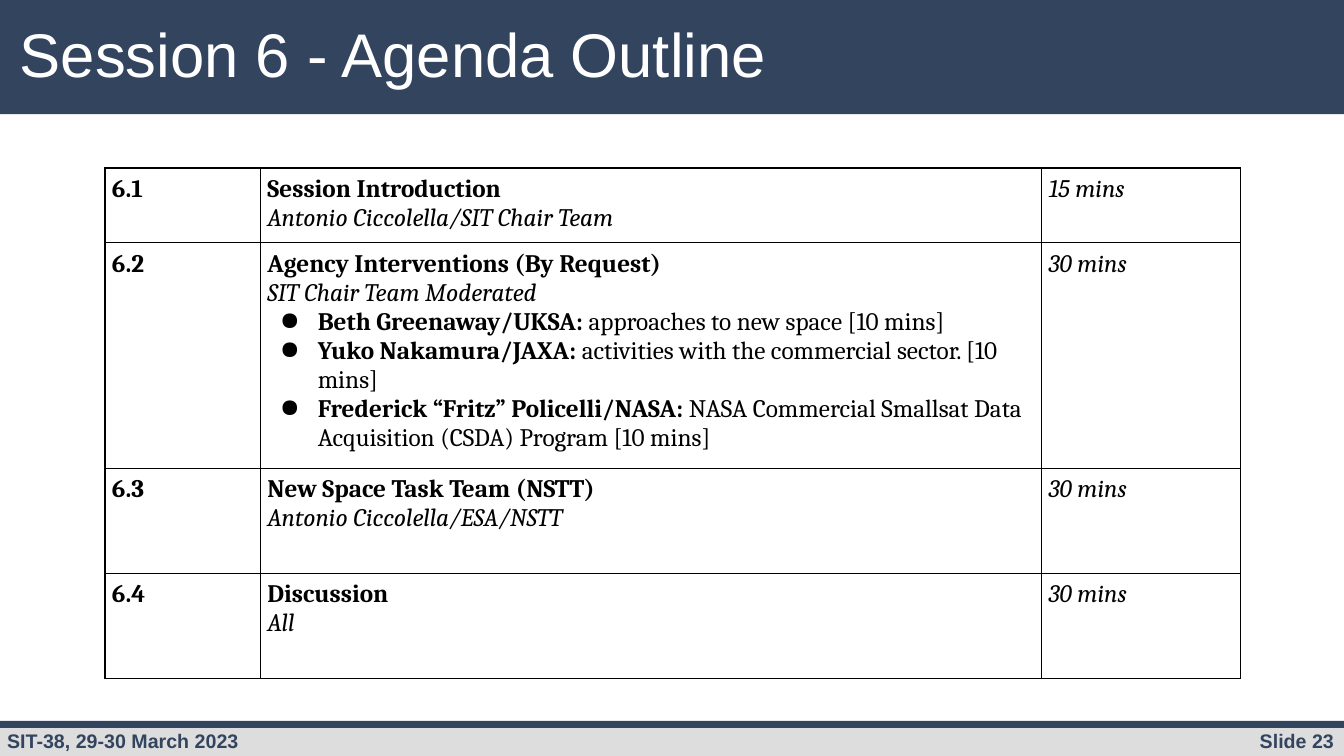
from lxml.etree import SubElement
from pptx import Presentation
from pptx.dml.color import RGBColor
from pptx.enum.shapes import MSO_SHAPE as Preset
from pptx.enum.text import MSO_ANCHOR as Anchor, PP_ALIGN as Align
from pptx.oxml.ns import qn
from pptx.util import Pt

COLORS = {"navy": "33445F", "gray": "DDDDDD", "white": "FFFFFF", "black": "000000"}
SLIDE_WIDTH, SLIDE_HEIGHT = 960, 540
COLUMN_WIDTHS = [111, 558, 142]
ROW_HEIGHTS = [53, 161, 75, 75]

# Number, topic, lead, speakers with their subjects, duration
AGENDA = [
    ("6.1", "Session Introduction", "Antonio Ciccolella/SIT Chair Team", [], "15 mins"),
    ("6.2", "Agency Interventions (By Request)", "SIT Chair Team Moderated", [
        ("Beth Greenaway/UKSA:", " approaches to new space [10 mins]"),
        ("Yuko Nakamura/JAXA:", " activities with the commercial sector. [10 mins]"),
        ("Frederick “Fritz” Policelli/NASA:",
         " NASA Commercial Smallsat Data Acquisition (CSDA) Program [10 mins]"),
    ], "30 mins"),
    ("6.3", "New Space Task Team (NSTT)", "Antonio Ciccolella/ESA/NSTT", [], "30 mins"),
    ("6.4", "Discussion", "All", [], "30 mins"),
]


def color(name):
    return RGBColor.from_string(COLORS[name])


def add_run(paragraph, text, size, ink, face="Arial", bold=False, italic=False):
    run = paragraph.add_run()
    run.text = text
    font = run.font
    font.name, font.size, font.bold, font.italic = face, Pt(size), bold, italic
    font.color.rgb = color(ink)


def add_band(slide, top, height, fill):
    band = slide.shapes.add_shape(Preset.RECTANGLE, 0, Pt(top), Pt(SLIDE_WIDTH), Pt(height))
    band.shadow.inherit = False
    band.fill.solid()
    band.fill.fore_color.rgb = color(fill)
    band.line.fill.background()


def add_footer_text(slide, left, width, text, align):
    box = slide.shapes.add_textbox(Pt(left), Pt(517), Pt(width), Pt(24))
    box.text_frame.word_wrap = True
    paragraph = box.text_frame.paragraphs[0]
    paragraph.alignment = align
    add_run(paragraph, text, 14, "navy", bold=True)


def add_title(slide, text):
    title = slide.shapes.title
    title.left, title.top, title.width, title.height = Pt(7), Pt(8), Pt(683), Pt(60)
    title.text_frame.vertical_anchor = Anchor.MIDDLE
    paragraph = title.text_frame.paragraphs[0]
    paragraph.alignment = Align.LEFT
    add_run(paragraph, text, 44, "white")


def add_bullet(paragraph):
    properties = paragraph._p.get_or_add_pPr()
    properties.set("marL", str(Pt(36)))
    properties.set("indent", str(Pt(-27)))
    bullet_color = SubElement(properties, qn("a:buClr"))
    SubElement(bullet_color, qn("a:srgbClr"), val=COLORS["black"])
    SubElement(properties, qn("a:buChar"), char="●")


def add_borders(cell):
    properties = cell._tc.get_or_add_tcPr()
    for position, side in enumerate(("lnL", "lnR", "lnT", "lnB")):
        border = properties.makeelement(qn(f"a:{side}"), {"w": str(Pt(1))})
        fill = SubElement(border, qn("a:solidFill"))
        SubElement(fill, qn("a:srgbClr"), val=COLORS["black"])
        properties.insert(position, border)


def fill_cell(cell, lines):
    """Each line is a list of (text, style) runs and a bullet flag."""
    cell.margin_left = cell.margin_right = cell.margin_top = cell.margin_bottom = Pt(5)
    cell.vertical_anchor = Anchor.TOP
    cell.fill.background()
    add_borders(cell)
    frame = cell.text_frame
    for index, (runs, bulleted) in enumerate(lines):
        paragraph = frame.add_paragraph() if index else frame.paragraphs[0]
        if bulleted:
            add_bullet(paragraph)
        for text, style in runs:
            add_run(paragraph, text, 18, "black", "Cambria",
                    bold=style == "bold", italic=style == "italic")


def add_agenda(slide):
    table = slide.shapes.add_table(
        len(AGENDA), len(COLUMN_WIDTHS), Pt(75), Pt(120),
        Pt(sum(COLUMN_WIDTHS)), Pt(sum(ROW_HEIGHTS))).table
    table.first_row = table.horz_banding = False
    for column, width in zip(table.columns, COLUMN_WIDTHS):
        column.width = Pt(width)
    for row, height, item in zip(table.rows, ROW_HEIGHTS, AGENDA):
        row.height = Pt(height)
        number, topic, lead, speakers, duration = item
        details = [([(topic, "bold")], False), ([(lead, "italic")], False)]
        details += [([(speaker, "bold"), (subject, "plain")], True)
                    for speaker, subject in speakers]
        contents = [[([(number, "bold")], False)], details, [([(duration, "italic")], False)]]
        for cell, lines in zip(row.cells, contents):
            fill_cell(cell, lines)


def main():
    deck = Presentation()
    deck.slide_width, deck.slide_height = Pt(SLIDE_WIDTH), Pt(SLIDE_HEIGHT)
    slide = deck.slides.add_slide(deck.slide_layouts[5])

    # Header; the title is moved in front of its band
    add_band(slide, 0, 81.5, "navy")
    slide.shapes._spTree.append(slide.shapes.title._element)
    add_title(slide, "Session 6 - Agenda Outline")

    # Footer
    add_band(slide, 517.5, 22.5, "gray")
    add_band(slide, 515, 5, "navy")
    add_footer_text(slide, -2, 388, "SIT-38, 29-30 March 2023", Align.LEFT)
    add_footer_text(slide, 808, 152, "Slide 23", Align.RIGHT)

    # Agenda
    add_agenda(slide)
    deck.save("out.pptx")


if __name__ == "__main__":
    main()
